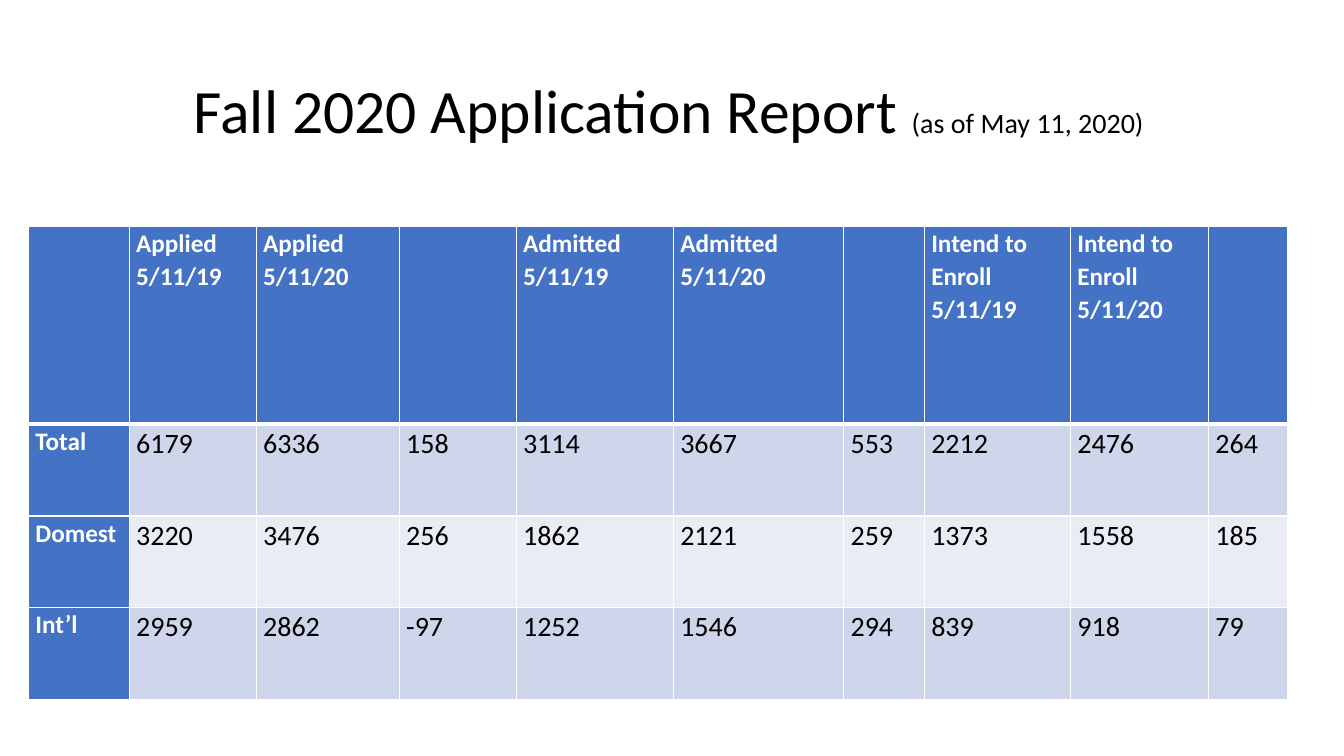
from lxml import etree
from pptx import Presentation
from pptx.dml.color import RGBColor
from pptx.enum.text import MSO_ANCHOR, MSO_AUTO_SIZE, PP_ALIGN
from pptx.oxml.ns import qn
from pptx.util import Pt

CENTER = PP_ALIGN.CENTER
MIDDLE = MSO_ANCHOR.MIDDLE
NO_FIT = MSO_AUTO_SIZE.NONE

WHITE = RGBColor(0xFF, 0xFF, 0xFF)
BLACK = RGBColor(0x00, 0x00, 0x00)
BLUE = RGBColor(0x44, 0x72, 0xC4)
BANDS = [RGBColor(0xCF, 0xD5, 0xEA), RGBColor(0xE9, 0xEB, 0xF5)]

FACE = "Calibri"
HEAD = {"name": FACE, "size": Pt(18), "bold": True}
BODY = {"name": FACE, "size": Pt(20), "bold": False}
LARGE = {"name": FACE, "size": Pt(44), "bold": False}
INSET = {"margin_left": Pt(5), "margin_right": Pt(5),
         "margin_top": Pt(0), "margin_bottom": Pt(0)}

WIDTHS = [72, 90.7, 102.2, 83.5, 112.3, 121.7, 57.6, 104.4, 98.6, 56.2]
HEIGHTS = [141.1, 65.5, 65.5, 65.5]
ROWS = [
    ["", "Applied 5/11/19", "Applied\n5/11/20", "",
     "Admitted\n5/11/19", "Admitted\n5/11/20", "",
     "Intend to\nEnroll\n5/11/19", "Intend to\nEnroll\n5/11/20", ""],
    ["Total", 6179, 6336, 158, 3114, 3667, 553, 2212, 2476, 264],
    ["Domest", 3220, 3476, 256, 1862, 2121, 259, 1373, 1558, 185],
    ["Int’l", 2959, 2862, -97, 1252, 1546, 294, 839, 918, 79],
]


def apply(item, values):
    """Set each named attribute of the item."""
    for name, value in values.items():
        setattr(item, name, value)


def style(run, look, color):
    """Give a run its font values and colour."""
    apply(run.font, look)
    run.font.color.rgb = color


def add_edges(cell, row):
    """Draw white cell borders, thick between the header and the body."""
    widths = {"L": 1, "R": 1, "T": 3 if row == 1 else 1, "B": 3 if row == 0 else 1}
    props = cell._tc.get_or_add_tcPr()
    for side, width in widths.items():
        line = etree.SubElement(props, qn(f"a:ln{side}"), w=str(int(Pt(width))))
        fill = etree.SubElement(line, qn("a:solidFill"))
        etree.SubElement(fill, qn("a:srgbClr"), val=str(WHITE))


def fill_cell(cell, value, row, col):
    """Write and format one table cell."""
    label = row == 0 or col == 0
    apply(cell, INSET)
    add_edges(cell, row)
    cell.fill.solid()
    cell.fill.fore_color.rgb = BLUE if label else BANDS[(row - 1) % 2]
    cell.text_frame.text = str(value)
    for para in cell.text_frame.paragraphs:
        para.line_spacing = 1.07
        for run in para.runs:
            style(run, HEAD if label else BODY, WHITE if label else BLACK)


def add_title(slide, left, top, width, height):
    """Place the title with its smaller date."""
    title = slide.shapes.title
    apply(title, {"left": Pt(left), "top": Pt(top),
                  "width": Pt(width), "height": Pt(height)})
    frame = title.text_frame
    apply(frame, {"word_wrap": True, "auto_size": NO_FIT, "vertical_anchor": MIDDLE})
    para = frame.paragraphs[0]
    apply(para, {"alignment": CENTER, "line_spacing": 0.9})
    parts = [("Fall 2020 Application Report ", LARGE), ("(as of May 11, 2020) ", BODY)]
    for text, look in parts:
        run = para.add_run()
        run.text = text
        style(run, look, BLACK)


def add_report(slide, left, top):
    """Place the table of applications."""
    table = slide.shapes.add_table(
        len(ROWS), len(WIDTHS), Pt(left), Pt(top),
        Pt(sum(WIDTHS)), Pt(sum(HEIGHTS))).table
    table.first_col = True
    for column, width in zip(table.columns, WIDTHS):
        column.width = Pt(width)
    for line, height in zip(table.rows, HEIGHTS):
        line.height = Pt(height)
    for row, values in enumerate(ROWS):
        for col, value in enumerate(values):
            fill_cell(table.cell(row, col), value, row, col)


def main():
    """Build and save the slide."""
    deck = Presentation()
    apply(deck, {"slide_width": Pt(960), "slide_height": Pt(540)})
    slide = deck.slides.add_slide(deck.slide_layouts[5])
    add_title(slide, 66, 28.75, 828, 104.4)
    add_report(slide, 20.3, 162)
    deck.save("out.pptx")


if __name__ == "__main__":
    main()
